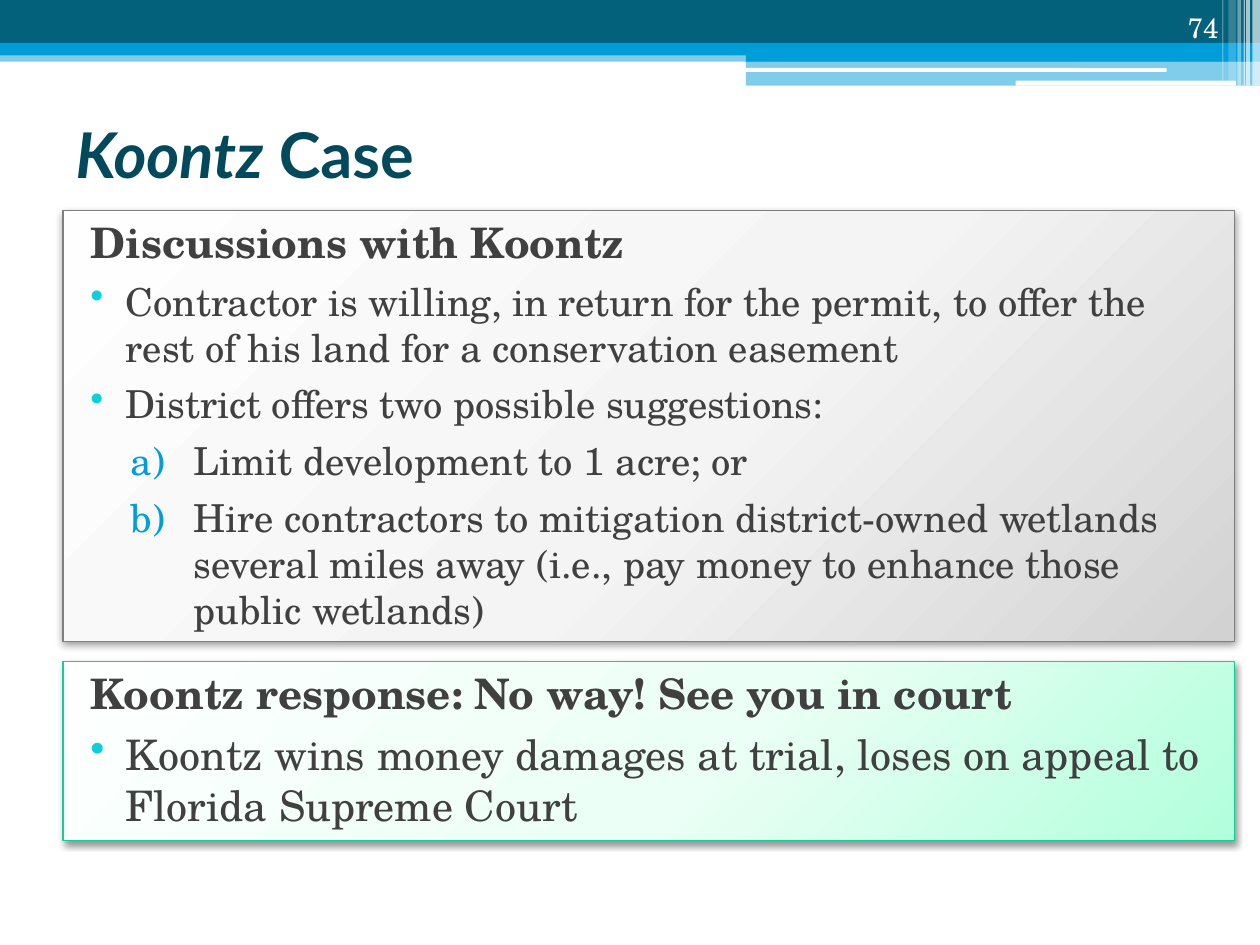
"""Builds the Koontz case slide with its banner, title and two text panels."""
from dataclasses import dataclass

from lxml import etree
from pptx import Presentation
from pptx.dml.color import RGBColor
from pptx.enum.shapes import MSO_SHAPE
from pptx.enum.text import MSO_ANCHOR, MSO_AUTO_SIZE, PP_ALIGN
from pptx.oxml import parse_xml
from pptx.oxml.ns import nsdecls, qn
from pptx.util import Inches, Pt

RECTANGLE, ROUNDED = MSO_SHAPE.RECTANGLE, MSO_SHAPE.ROUNDED_RECTANGLE
TOP, BOTTOM = MSO_ANCHOR.TOP, MSO_ANCHOR.BOTTOM
LEFT, RIGHT = PP_ALIGN.LEFT, PP_ALIGN.RIGHT
NO_AUTOFIT = MSO_AUTO_SIZE.NONE


@dataclass(frozen=True)
class Theme:
    """Colours, fonts and type sizes of the slide."""
    teal: str = "04617B"
    blue: str = "009DD9"
    white: str = "FFFFFF"
    title: str = "03495C"
    body: str = "404040"
    bullet: str = "0BD0D9"
    grey_line: str = "7F7F7F"
    green_line: str = "10CF9B"
    grey_stops: tuple = ((0, "FEFEFE"), (55, "F4F4F4"), (100, "D2D2D2"))
    green_stops: tuple = ((0, "FDFFFE"), (55, "ECFFF6"), (100, "B1FFDB"))
    heading_font: str = "Lato"
    body_font: str = "TeX Gyre Schola"
    title_size: int = 36
    lead_size: int = 24
    item_size: int = 22
    number_size: int = 16


@dataclass(frozen=True)
class Level:
    """Indents and marker of a paragraph level."""
    margin: float
    indent: float = 0
    marker: str = ""
    value: str = ""
    color: str = ""


THEME = Theme()
LEAD = Level(0.12)
ITEM = Level(0.4, -0.28, "buChar", 'char="•"', THEME.bullet)
LETTER = Level(0.94, -0.5, "buAutoNum", 'type="alphaLcParenR"', THEME.blue)

BANDS = [
    (0, 0.4, 10, 0.09, THEME.blue, 50),
    (0, 0, 10, 0.34, THEME.teal, 100),
    (0, 0.34, 10, 0.1, THEME.blue, 100),
    (5.92, 0.39, 4.08, 0.1, THEME.blue, 100),
    (5.92, 0.48, 4.08, 0.2, THEME.blue, 50),
]
RULES = [(5.91, 0.54, 3.35, 0.03), (8.06, 0.64, 1.75, 0.04)]
STRIPES = [
    (9.94, 0.06, 0.68, 65), (9.89, 0.03, 0.68, 65), (9.87, 0.01, 0.68, 60),
    (9.82, 0.03, 0.68, 40), (9.75, 0.06, 0.64, 20), (9.7, 0.01, 0.64, 30),
]
DISCUSSION = [
    (LEAD, "Discussions with Koontz", THEME.lead_size),
    (ITEM, "Contractor is willing, in return for the permit, to offer the rest "
           "of his land for a conservation easement", THEME.item_size),
    (ITEM, "District offers two possible suggestions:", THEME.item_size),
    (LETTER, "Limit development to 1 acre; or", THEME.item_size),
    (LETTER, "Hire contractors to mitigation district-owned wetlands several "
             "miles away (i.e., pay money to enhance those public wetlands)",
     THEME.item_size),
]
RESPONSE = [
    (LEAD, "Koontz response: No way! See you in court", THEME.lead_size),
    (ITEM, "Koontz wins money damages at trial, loses on appeal to Florida "
           "Supreme Court", THEME.lead_size),
]


class SlideBuilder:
    """Draws each kind of element on the current slide."""

    def __init__(self, deck, theme):
        self.theme = theme
        self.page = deck.slides.add_slide(deck.slide_layouts[5])

    def shape(self, kind, place):
        box = self.page.shapes.add_shape(kind, *map(Inches, place))
        box.shadow.inherit = False
        return box

    def bar(self, place, color, opacity=100, kind=RECTANGLE):
        box = self.shape(kind, place)
        box.fill.solid()
        box.fill.fore_color.rgb = RGBColor.from_string(color)
        box.line.fill.background()
        if opacity < 100:
            tone = next(box.fill._xPr.iter(qn("a:srgbClr")))
            etree.SubElement(tone, qn("a:alpha"), val=str(opacity * 1000))

    def frame(self, box, **values):
        settings = {"word_wrap": True, "auto_size": NO_AUTOFIT,
                    "vertical_anchor": TOP, **values}
        for name, value in settings.items():
            setattr(box.text_frame, name, value)
        return box.text_frame

    def span(self, para, text, color, **values):
        span = para.add_run()
        span.text = text
        for name, value in values.items():
            setattr(span.font, name, value)
        span.font.color.rgb = RGBColor.from_string(color)

    def title(self, place, spans):
        box = self.page.shapes.title
        for name, value in zip(("left", "top", "width", "height"), place):
            setattr(box, name, Inches(value))
        para = self.frame(box, margin_top=0).paragraphs[0]
        para.alignment = LEFT
        for text, italic in spans:
            self.span(para, text, self.theme.title, bold=True, italic=italic,
                      name=self.theme.heading_font,
                      size=Pt(self.theme.title_size))

    def page_number(self, place, text):
        box = self.page.shapes.add_textbox(*map(Inches, place))
        para = self.frame(box, vertical_anchor=BOTTOM).paragraphs[0]
        para.alignment = RIGHT
        self.span(para, text, self.theme.white, name=self.theme.body_font,
                  size=Pt(self.theme.number_size))

    def panel(self, place, stops, line_color, entries):
        box = self.shape(RECTANGLE, place)
        box.line.color.rgb = RGBColor.from_string(line_color)
        box.line.width = Pt(0.75)
        marks = "".join(f'<a:gs pos="{stop * 1000}"><a:srgbClr val="{color}"/></a:gs>'
                        for stop, color in stops)
        properties = box.element.spPr
        properties.find(qn("a:prstGeom")).addnext(parse_xml(
            f'<a:gradFill {nsdecls("a")} rotWithShape="1"><a:gsLst>{marks}</a:gsLst>'
            '<a:path path="circle"><a:fillToRect l="-40000" t="-90000" '
            'r="140000" b="190000"/></a:path></a:gradFill>'))
        properties.find(qn("a:effectLst")).append(parse_xml(
            f'<a:outerShdw {nsdecls("a")} blurRad="{Pt(4.1)}" dist="{Pt(2)}" '
            'dir="5400000" rotWithShape="0"><a:srgbClr val="000000">'
            '<a:alpha val="40000"/></a:srgbClr></a:outerShdw>'))
        frame = self.frame(box)
        for index, entry in enumerate(entries):
            para = frame.add_paragraph() if index else frame.paragraphs[0]
            self.entry(para, *entry)

    def entry(self, para, level, text, size):
        properties = para._p.get_or_add_pPr()
        properties.set("marL", str(Inches(level.margin)))
        properties.set("indent", str(Inches(level.indent)))
        if level.marker:
            for markup in (f'buClr {nsdecls("a")}><a:srgbClr val="{level.color}"/></a:buClr',
                           f'{level.marker} {nsdecls("a")} {level.value}/'):
                properties.append(parse_xml(f"<a:{markup}>"))
        para.alignment = LEFT
        para.space_after = Pt(6)
        self.span(para, text, self.theme.body, name=self.theme.body_font,
                  size=Pt(size), bold=not level.marker)


def main():
    deck = Presentation()
    deck.slide_width, deck.slide_height = Inches(10), Inches(7.5)
    slide = SlideBuilder(deck, THEME)
    for *place, color, opacity in BANDS:
        slide.bar(place, color, opacity)
    for place in RULES:
        slide.bar(place, THEME.white, kind=ROUNDED)
    for left, width, height, opacity in STRIPES:
        slide.bar((left, 0, width, height), THEME.white, opacity)
    slide.title((0.5, 0.92, 9, 1.2), [("Koontz", True), (" Case", False)])
    slide.panel((0.5, 1.67, 9.3, 3.42), THEME.grey_stops, THEME.grey_line, DISCUSSION)
    slide.panel((0.5, 5.25, 9.3, 1.42), THEME.green_stops, THEME.green_line, RESPONSE)
    slide.page_number((8.94, 0, 0.83, 0.4), "74")
    deck.save("out.pptx")


if __name__ == "__main__":
    main()
